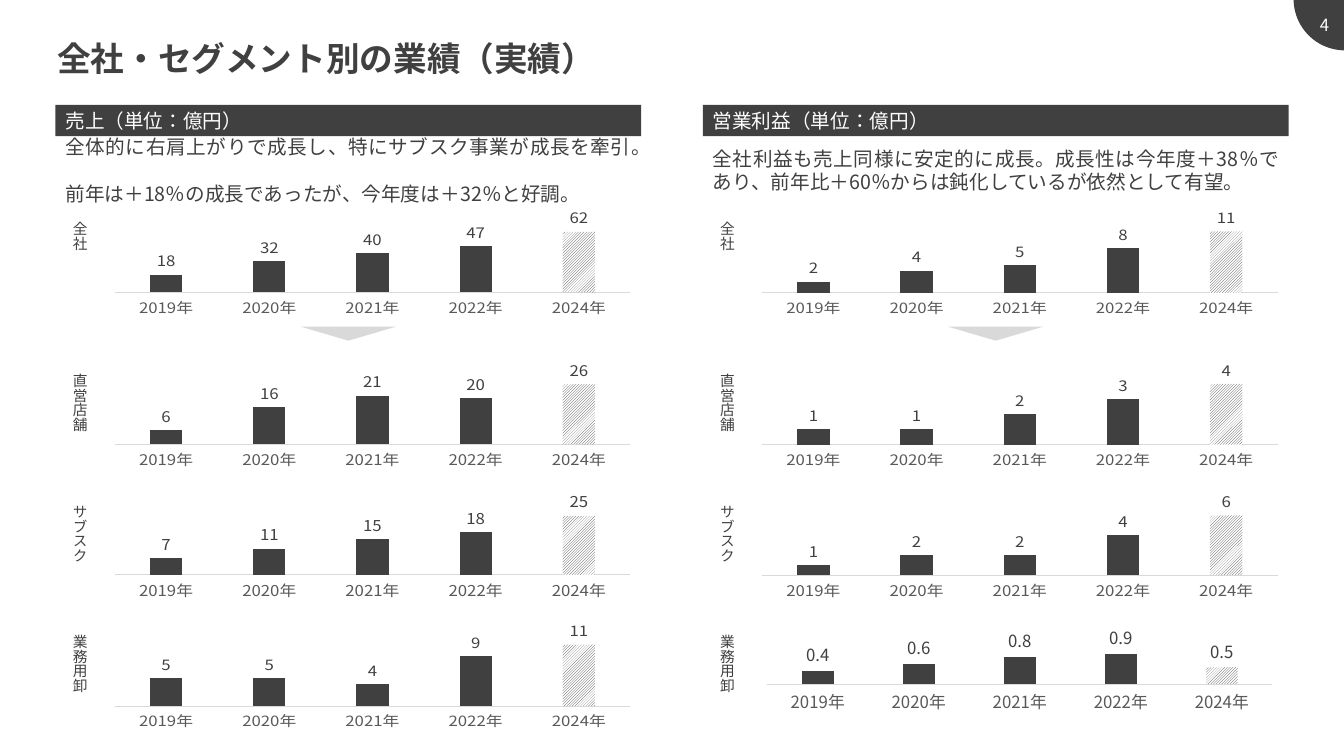
from copy import deepcopy

from lxml.etree import SubElement
from pptx import Presentation
from pptx.chart.data import CategoryChartData as ChartData
from pptx.dml.color import RGBColor
from pptx.enum.chart import XL_CHART_TYPE as Kind, XL_LABEL_POSITION as Spot
from pptx.enum.chart import XL_TICK_MARK as Tick
from pptx.enum.dml import MSO_PATTERN as Pattern
from pptx.enum.lang import MSO_LANGUAGE_ID as Lang
from pptx.enum.shapes import MSO_SHAPE as Shape
from pptx.enum.text import MSO_ANCHOR as Anchor, PP_ALIGN as Align
from pptx.oxml.ns import qn
from pptx.util import Inches, Pt

DARK = RGBColor(0x40, 0x40, 0x40)
GREY = RGBColor(0x59, 0x59, 0x59)
PALE = RGBColor(0xD9, 0xD9, 0xD9)
WHITE = RGBColor(0xFF, 0xFF, 0xFF)
FONT = "Noto Sans CJK JP"

YEARS = ["2019年", "2020年", "2021年", "2022年", "2024年"]
UNITS = ["全社", "直営店舗", "サブスク", "業務用卸"]
TOPS = [2.05, 3.56, 4.86, 6.15]
PANELS = [
    ("売上（単位：億円）",
     "全体的に右肩上がりで成長し、特にサブスク事業が成長を牽引。\v"
     "前年は＋18％の成長であったが、今年度は＋32％と好調。",
     [[18, 32, 40, 47, 62], [6, 16, 21, 20, 26],
      [7, 11, 15, 18, 25], [5, 5, 4, 9, 11]]),
    ("営業利益（単位：億円）",
     "全社利益も売上同様に安定的に成長。成長性は今年度＋38％であり、"
     "前年比＋60％からは鈍化しているが依然として有望。",
     [[2, 4, 5, 8, 11], [1, 1, 2, 3, 4],
      [1, 2, 2, 4, 6], [0.4, 0.6, 0.8, 0.9, 0.5]]),
]


def set_font(font, size, color, bold=False):
    font.size = Pt(size)
    font.bold = bold
    font.color.rgb = color
    font.name = FONT
    SubElement(font._rPr, qn("a:ea")).set("typeface", FONT)


def write(shape, text, size, color, align, bold=False):
    frame = shape.text_frame
    frame.word_wrap = True
    frame.vertical_anchor = Anchor.MIDDLE
    frame.text = text
    para = frame.paragraphs[0]
    para.alignment = align
    for run in para.runs:
        set_font(run.font, size, color, bold)
        run.font.language_id = Lang.JAPANESE
    # Line breaks take the size of the text around them
    for gap in para._p.findall(qn("a:br")):
        gap.append(deepcopy(para.runs[0].font._rPr))
    return frame


def add_box(slide, x, y, w, h, *style):
    box = slide.shapes.add_textbox(Inches(x), Inches(y), Inches(w), Inches(h))
    return write(box, *style)


def add_solid(slide, kind, x, y, w, h, color):
    shape = slide.shapes.add_shape(kind, Inches(x), Inches(y), Inches(w), Inches(h))
    shape.shadow.inherit = False
    shape.fill.solid()
    shape.fill.fore_color.rgb = color
    shape.line.fill.background()
    return shape


def set_plot(chart, x, y, w, h):
    """Fix the inner plot area, as shares of the chart."""
    plot = chart._chartSpace.chart.plotArea
    for old in plot.findall(qn("c:layout")):
        plot.remove(old)
    layout = SubElement(plot, qn("c:layout"))
    plot.insert(0, layout)
    manual = SubElement(layout, qn("c:manualLayout"))
    parts = dict(layoutTarget="inner", xMode="edge", yMode="edge", x=x, y=y, w=w, h=h)
    for tag, val in parts.items():
        SubElement(manual, qn("c:" + tag)).set("val", str(val))


def add_bars(slide, x, y, w, h, vals):
    data = ChartData()
    data.categories = YEARS
    data.add_series("Series 1", vals)
    chart = slide.shapes.add_chart(Kind.COLUMN_CLUSTERED, Inches(x), Inches(y),
                                   Inches(w), Inches(h), data).chart
    chart.has_legend = False
    chart.has_title = False
    set_font(chart.font, 10, RGBColor(0, 0, 0))

    # Axes
    cat = chart.category_axis
    cat.major_tick_mark = cat.minor_tick_mark = Tick.NONE
    cat.has_major_gridlines = False
    cat.format.line.color.rgb = PALE
    cat.format.line.width = Pt(0.75)
    set_font(cat.tick_labels.font, 12, GREY)
    axis = chart.value_axis
    axis.has_major_gridlines = False
    axis.minimum_scale = 0
    axis.visible = False

    # Columns, the last one hatched
    plot = chart.plots[0]
    plot.vary_by_categories = False
    plot.gap_width = 219
    plot.overlap = -27
    series = plot.series[0]
    series.format.fill.solid()
    series.format.fill.fore_color.rgb = DARK
    hatch = series.points[len(vals) - 1].format.fill
    hatch.patterned()
    hatch.pattern = Pattern.DARK_UPWARD_DIAGONAL
    hatch.fore_color.rgb = DARK
    hatch.back_color.rgb = WHITE

    # Values
    labels = series.data_labels
    labels.show_value = True
    labels.position = Spot.OUTSIDE_END
    set_font(labels.font, 12, DARK)
    return chart


def add_row(slide, x, y, w, unit, vals):
    side = add_box(slide, x, y + 0.05, 0.48, 1.03, unit, 10.5, DARK, Align.CENTER)
    side._txBody.bodyPr.set("vert", "eaVert")
    chart = add_bars(slide, x + 0.48, y, w - 0.48, 1.12, vals)
    if max(vals) < 1:
        set_plot(chart, 0.03, 0.27, 0.94, 0.3)


def add_panel(slide, x, y, w, head, note, rows):
    bar = add_solid(slide, Shape.RECTANGLE, x, y, w, 0.31, DARK)
    write(bar, head, 14, WHITE, Align.JUSTIFY)
    for top, unit, vals in zip(TOPS, UNITS, rows):
        add_row(slide, x, top, w, unit, vals)
    arrow = add_solid(slide, Shape.ISOSCELES_TRIANGLE, x + 2.43, y + 2.2, 0.95, 0.14, PALE)
    arrow.rotation = 180
    add_box(slide, x, y + 0.4, w, 0.5, note, 14, DARK, Align.JUSTIFY)


def add_header(slide):
    # Page number in the corner
    pie = add_solid(slide, Shape.PIE, 12.83, -0.52, 1.02, 1.02, DARK)
    pie.adjustments[0] = 53.55
    pie.adjustments[1] = 108.05
    add_box(slide, 12.79, 0, 0.49, 0.5, "4", 12, WHITE, Align.RIGHT)
    # Title
    title = add_box(slide, 0.47, 0.27, 6.01, 0.62, "全社・セグメント別の業績（実績）",
                    24, DARK, Align.LEFT, True)
    title.paragraphs[0].space_before = Pt(6)


def main():
    deck = Presentation()
    deck.slide_width = Inches(13.33)
    deck.slide_height = Inches(7.5)
    slide = deck.slides.add_slide(deck.slide_layouts[6])
    add_header(slide)
    for col, panel in enumerate(PANELS):
        add_panel(slide, 0.55 + 6.42 * col, 1.04, 5.81, *panel)
    deck.save("out.pptx")


if __name__ == "__main__":
    main()
